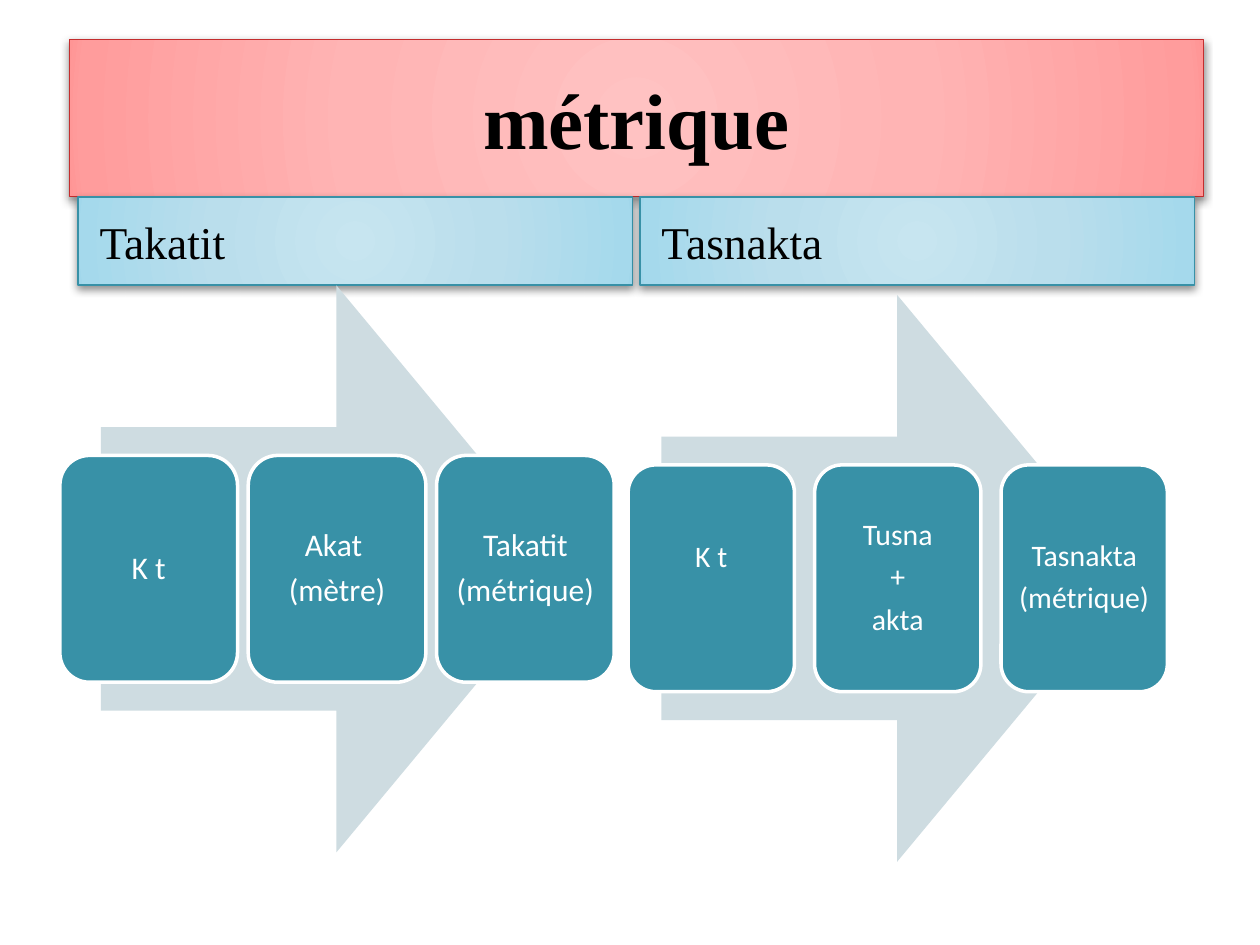
from dataclasses import dataclass

from lxml.etree import SubElement
from pptx import Presentation
from pptx.dml.color import RGBColor
from pptx.enum.shapes import MSO_SHAPE
from pptx.enum.text import MSO_ANCHOR, PP_ALIGN
from pptx.oxml import parse_xml
from pptx.oxml.ns import nsdecls, qn
from pptx.util import Inches, Pt

WIDTH, HEIGHT = Inches(10), Inches(7.5)
COLORS = {"black": "000000", "white": "FFFFFF", "red": "C32D2E",
          "teal": "3891A7", "mist": "CEDCE1"}
PINK = ((0, "FFC2C2"), (50, "FFB4B4"), (97, "FF9C9C"), (100, "FF9595"))
SKY = ((0, "C7E5F0"), (50, "BADEEC"), (97, "A5D9EC"), (100, "A1D7EB"))
TITLE_FORMAT = {"name": "Times New Roman", "size": Pt(45), "bold": True}
HEADING_FORMAT = {"name": "Times New Roman", "size": Pt(26)}


@dataclass(frozen=True)
class Area:
    """A rectangle in percent of the slide's width and height."""
    left: float
    top: float
    width: float
    height: float


@dataclass(frozen=True)
class Card:
    """The lines of a card and the room kept free below them."""
    lines: tuple[str, ...]
    bottom: float = 0.07


@dataclass(frozen=True)
class Process:
    """A heading above an arrow that carries a row of cards."""
    heading: str
    heading_left: float
    arrow_left: float
    arrow_top: float
    card_left: float
    card_width: float
    card_pitch: float
    size: int
    cards: tuple[Card, ...]


PROCESSES = (
    Process("Takatit", 6.2, 8, 30.2, 4.75, 14.1, 14.95, 18, (
        Card(("K t",)), Card(("Akat ", "(mètre)")), Card(("Takatit", "(métrique)")))),
    Process("Tasnakta", 50.8, 52.5, 31.2, 49.85, 13.2, 14.8, 17, (
        Card(("K t",), 0.4), Card(("Tusna", "+", "akta")), Card(("Tasnakta", "(métrique)")))),
)


def add_box(page, kind: MSO_SHAPE, area: Area, fill: str, line: str | None = None,
            line_width: float = 0.75):
    """Add a flat preset shape without a shadow."""
    box = page.shapes.add_shape(
        kind, round(WIDTH * area.left / 100), round(HEIGHT * area.top / 100),
        round(WIDTH * area.width / 100), round(HEIGHT * area.height / 100))
    box.shadow.inherit = False
    box.fill.solid()
    box.fill.fore_color.rgb = RGBColor.from_string(COLORS[fill])
    if line is None:
        box.line.fill.background()
    else:
        box.line.color.rgb = RGBColor.from_string(COLORS[line])
        box.line.width = Pt(line_width)
    return box


def write(box, lines: tuple[str, ...], font: dict, color: str,
          frame_format: dict, para_format: dict) -> None:
    """Write one paragraph per line into a box."""
    frame = box.text_frame
    settings = {"word_wrap": True, "vertical_anchor": MSO_ANCHOR.MIDDLE, **frame_format}
    for name, value in settings.items():
        setattr(frame, name, value)
    for index, line in enumerate(lines):
        para = frame.add_paragraph() if index else frame.paragraphs[0]
        for name, value in para_format.items():
            setattr(para, name, value)
        span = para.add_run()
        span.text = line
        for name, value in font.items():
            setattr(span.font, name, value)
        span.font.color.rgb = RGBColor.from_string(COLORS[color])


def add_banner(page, area: Area, stops: tuple, line: str, text: str,
               font: dict, align: PP_ALIGN, inset: float) -> None:
    """Add a rectangle with a radial gradient and a soft shadow."""
    box = add_box(page, MSO_SHAPE.RECTANGLE, area, "white", line)
    properties = box._element.spPr
    colors = "".join(f'<a:gs pos="{share * 1000}"><a:srgbClr val="{color}"/></a:gs>'
                     for share, color in stops)
    gradient = parse_xml(
        f'<a:gradFill {nsdecls("a")} rotWithShape="1"><a:gsLst>{colors}</a:gsLst>'
        '<a:path path="circle"><a:fillToRect l="50000" t="50000" r="50000" b="50000"/>'
        '</a:path></a:gradFill>')
    properties.replace(properties.find(qn("a:solidFill")), gradient)
    shadow = SubElement(properties.find(qn("a:effectLst")), qn("a:outerShdw"),
                        blurRad=str(Pt(5)), dist=str(Pt(2)), dir="5400000",
                        rotWithShape="0")
    shade = SubElement(shadow, qn("a:srgbClr"), val=COLORS["black"])
    SubElement(shade, qn("a:alpha"), val="43000")
    write(box, (text,), font, "black", {"margin_left": Inches(inset)}, {"alignment": align})


def add_process(page, process: Process) -> None:
    """Draw the arrow of a process and its cards."""
    arrow = Area(process.arrow_left, process.arrow_top, 37.4, 60)
    add_box(page, MSO_SHAPE.RIGHT_ARROW, arrow, "mist")
    for index, card in enumerate(process.cards):
        area = Area(process.card_left + index * process.card_pitch,
                    arrow.top + 0.3 * arrow.height, process.card_width, 0.4 * arrow.height)
        box = add_box(page, MSO_SHAPE.ROUNDED_RECTANGLE, area, "teal", "white", 2)
        write(box, card.lines, {"name": "Calibri", "size": Pt(process.size)}, "white",
              {"margin_left": Inches(0.02), "margin_right": Inches(0.02),
               "margin_top": Inches(0.07), "margin_bottom": Inches(card.bottom)},
              {"alignment": PP_ALIGN.CENTER, "line_spacing": 0.9,
               "space_after": Pt(process.size / 3)})


def main() -> None:
    """Build the slide and save it."""
    deck = Presentation()
    deck.slide_width, deck.slide_height = WIDTH, HEIGHT
    page = deck.slides.add_slide(deck.slide_layouts[6])
    add_banner(page, Area(5.5, 4.17, 90, 16.67), PINK, "red", "métrique",
               TITLE_FORMAT, PP_ALIGN.CENTER, 0.1)
    for process in PROCESSES:
        add_banner(page, Area(process.heading_left, 20.84, 44, 9.33), SKY, "teal",
                   process.heading, HEADING_FORMAT, PP_ALIGN.LEFT, 0.17)
    for process in PROCESSES:
        add_process(page, process)
    deck.save("out.pptx")


if __name__ == "__main__":
    main()
